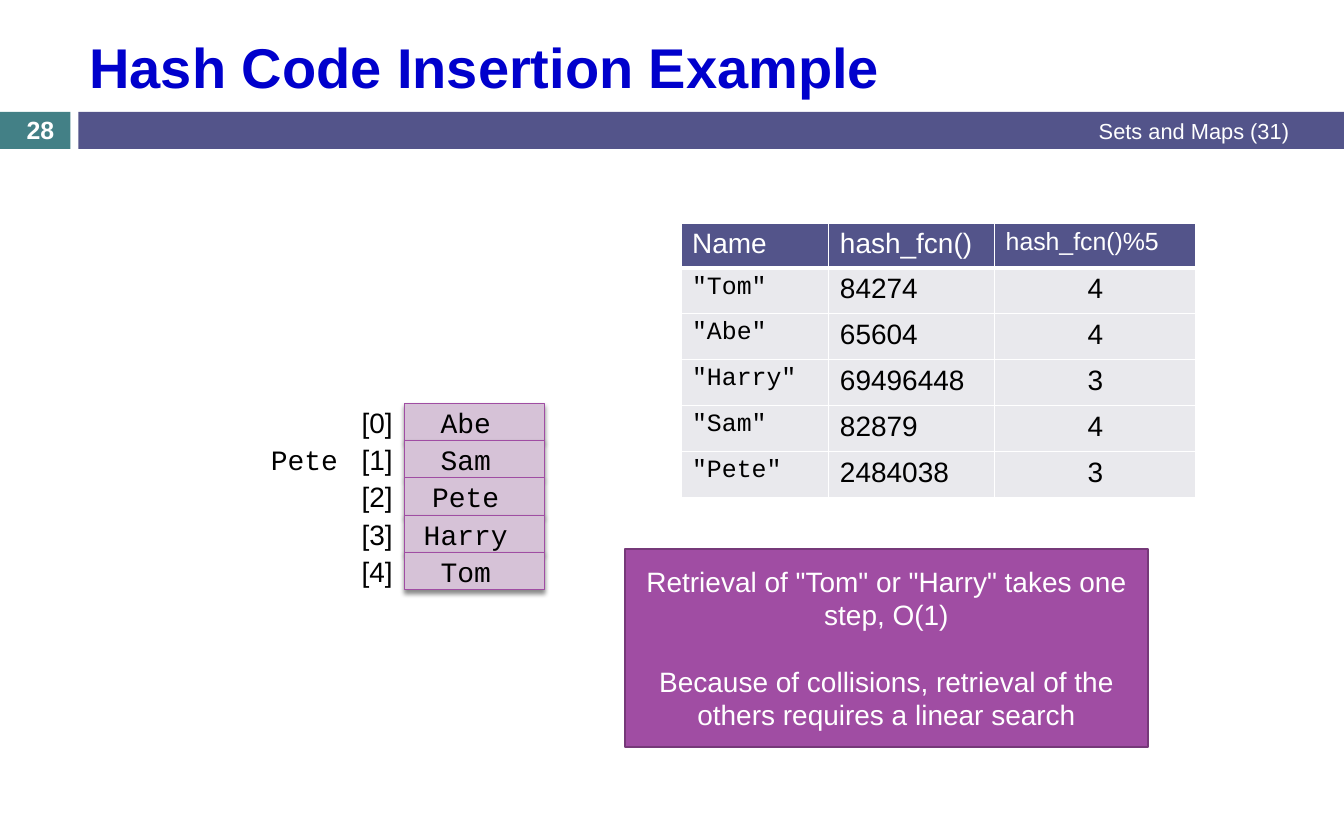
from dataclasses import dataclass

import pptx
import pptx.dml.color
import pptx.enum.shapes
import pptx.enum.text
import pptx.oxml
import pptx.oxml.ns
import pptx.util
from pptx.util import Inches

RGBColor = pptx.dml.color.RGBColor
ALIGN = pptx.enum.text.PP_ALIGN
ANCHOR = pptx.enum.text.MSO_ANCHOR

WHITE = RGBColor(0xFF, 0xFF, 0xFF)
BLACK = RGBColor(0x00, 0x00, 0x00)
TITLE_BLUE = RGBColor(0x00, 0x00, 0xCC)
TEAL = RGBColor(0x43, 0x80, 0x86)
INDIGO = RGBColor(0x53, 0x54, 0x8A)
LILAC = RGBColor(0xD6, 0xC2, 0xD7)
PURPLE = RGBColor(0xA0, 0x4D, 0xA3)
DARK_PURPLE = RGBColor(0x76, 0x39, 0x79)
PALE_GREY = RGBColor(0xE9, 0xE9, 0xED)


@dataclass(frozen=True)
class Style:
    size: float = 18
    color: RGBColor = BLACK
    font: str = "Arial"
    bold: bool = False
    align: ALIGN = ALIGN.LEFT


@dataclass(frozen=True)
class Box:
    left: float
    top: float
    width: float
    height: float

    def emu(self) -> list:
        return [Inches(v) for v in (self.left, self.top, self.width, self.height)]


@dataclass(frozen=True)
class Hashed:
    name: str
    code: int


BODY = Style()
CODE = Style(font="Courier New")
SMALL_CODE = Style(16, font="Courier New")
CENTERED = Style(align=ALIGN.CENTER)
HEADER = Style(color=WHITE)
SMALL_HEADER = Style(16, WHITE)

ENTRIES = [
    Hashed("Tom", 84274),
    Hashed("Abe", 65604),
    Hashed("Harry", 69496448),
    Hashed("Sam", 82879),
    Hashed("Pete", 2484038),
]
BUCKETS = ["Abe", "Sam", "Pete", "Harry", "Tom"]
BUCKET_TOP, BUCKET_HEIGHT = 3.6, 1 / 3
NAME_CENTER = 4.16


def write(paragraph, text: str, style: Style) -> None:
    paragraph.alignment = style.align
    run = paragraph.add_run()
    run.text = text
    run.font.size = pptx.util.Pt(style.size)
    run.font.name = style.font
    run.font.bold = style.bold
    run.font.color.rgb = style.color


def add_text(slide, box: Box, text: str, style: Style,
             anchor: ANCHOR = ANCHOR.TOP, wrap: bool = False) -> None:
    frame = slide.shapes.add_textbox(*box.emu()).text_frame
    frame.word_wrap = wrap
    frame.vertical_anchor = anchor
    write(frame.paragraphs[0], text, style)


def add_rect(slide, box: Box, fill: RGBColor, line: RGBColor | None = None,
             line_width: float = 1):
    rect = slide.shapes.add_shape(
        pptx.enum.shapes.MSO_SHAPE.RECTANGLE, *box.emu())
    rect.shadow.inherit = False
    rect.fill.solid()
    rect.fill.fore_color.rgb = fill
    if line is None:
        rect.line.fill.background()
    else:
        rect.line.color.rgb = line
        rect.line.width = pptx.util.Pt(line_width)
    return rect


def cast_shadow(shape) -> None:
    """Give the shape a soft shadow falling straight down."""
    effects = shape._element.spPr.find(pptx.oxml.ns.qn("a:effectLst"))
    effects.append(pptx.oxml.parse_xml(
        f'<a:outerShdw {pptx.oxml.ns.nsdecls("a")} blurRad="38100" dist="30000" '
        'dir="5400000" rotWithShape="0"><a:srgbClr val="000000">'
        '<a:alpha val="45000"/></a:srgbClr></a:outerShdw>'))


def add_name(slide, center: float, top: float, name: str) -> None:
    """Centre a name on a point, in a box as wide as its fixed-width letters."""
    width = 0.2 + 0.15 * len(name)
    add_text(slide, Box(center - width / 2, top, width, 0.4), name, CODE)


def fill_cell(cell, text: str, style: Style, fill: RGBColor,
              bottom_width: float = 1) -> None:
    properties = cell._tc.get_or_add_tcPr()
    for side in "LRTB":
        width = pptx.util.Pt(bottom_width if side == "B" else 1)
        properties.append(pptx.oxml.parse_xml(
            f'<a:ln{side} {pptx.oxml.ns.nsdecls("a")} w="{width}"><a:solidFill>'
            f'<a:srgbClr val="{WHITE}"/></a:solidFill></a:ln{side}>'))
    cell.fill.solid()
    cell.fill.fore_color.rgb = fill
    write(cell.text_frame.paragraphs[0], text, style)


def add_banner(slide) -> None:
    add_rect(slide, Box(0, 1, 0.63, 0.33), TEAL)
    add_rect(slide, Box(0.7, 1, 11.3, 0.33), INDIGO)
    add_text(slide, Box(4.5, 0.99, 7.11, 0.35), "Sets and Maps (31)",
             Style(14, WHITE, align=ALIGN.RIGHT), ANCHOR.MIDDLE, True)
    add_text(slide, Box(0, 1.01, 0.72, 0.3), "28",
             Style(16, WHITE, bold=True, align=ALIGN.CENTER), ANCHOR.MIDDLE, True)
    add_text(slide, Box(0.7, 0.19, 10.91, 0.8), "Hash Code Insertion Example",
             Style(36, TITLE_BLUE, bold=True), ANCHOR.MIDDLE, True)


def add_buckets(slide) -> None:
    tops = [BUCKET_TOP + i * BUCKET_HEIGHT for i in range(len(BUCKETS))]
    for top in tops:
        cast_shadow(add_rect(slide, Box(3.61, top, 1.25, BUCKET_HEIGHT),
                             LILAC, PURPLE, 0.79))
    for index, (top, name) in enumerate(zip(tops, BUCKETS)):
        add_text(slide, Box(3.13, top - 0.03, 0.48, 0.4), f"[{index}]", BODY)
        add_name(slide, NAME_CENTER, top - 0.03, name)
    add_name(slide, 2.72, tops[1] - 0.03, "Pete")


def add_hash_table(slide) -> None:
    table = slide.shapes.add_table(
        len(ENTRIES) + 1, 3, *Box(6.08, 1.99, 4.6, 2.43).emu()).table
    table.horz_banding = False
    for column, width in zip(table.columns, (1.32, 1.48, 1.8)):
        column.width = Inches(width)
    for index, row in enumerate(table.rows):
        row.height = Inches(0.41 if index else 0.31)

    headings = [("Name", HEADER), ("hash_fcn()", HEADER),
                ("hash_fcn()%5", SMALL_HEADER)]
    for cell, (heading, style) in zip(table.rows[0].cells, headings):
        fill_cell(cell, heading, style, INDIGO, bottom_width=3)
    for index, entry in enumerate(ENTRIES, start=1):
        values = [(f'"{entry.name}"', SMALL_CODE), (str(entry.code), BODY),
                  (str(entry.code % len(BUCKETS)), CENTERED)]
        for cell, (value, style) in zip(table.rows[index].cells, values):
            fill_cell(cell, value, style, PALE_GREY)


def add_conclusion(slide) -> None:
    panel = add_rect(slide, Box(5.58, 4.9, 4.67, 1.77), PURPLE, DARK_PURPLE, 1.5)
    frame = panel.text_frame
    frame.word_wrap = True
    frame.vertical_anchor = ANCHOR.MIDDLE
    style = Style(color=WHITE, align=ALIGN.CENTER)
    write(frame.paragraphs[0],
          'Retrieval of "Tom" or "Harry" takes one step, O(1)', style)
    collisions = frame.add_paragraph()
    collisions.space_before = pptx.util.Pt(21)
    write(collisions, "Because of collisions, retrieval of the others "
          "requires a linear search", style)


def main() -> None:
    deck = pptx.Presentation()
    deck.slide_width, deck.slide_height = Inches(12), Inches(7.5)
    slide = deck.slides.add_slide(deck.slide_layouts[6])
    add_banner(slide)
    add_buckets(slide)
    add_conclusion(slide)
    add_hash_table(slide)
    deck.save("out.pptx")


if __name__ == "__main__":
    main()
